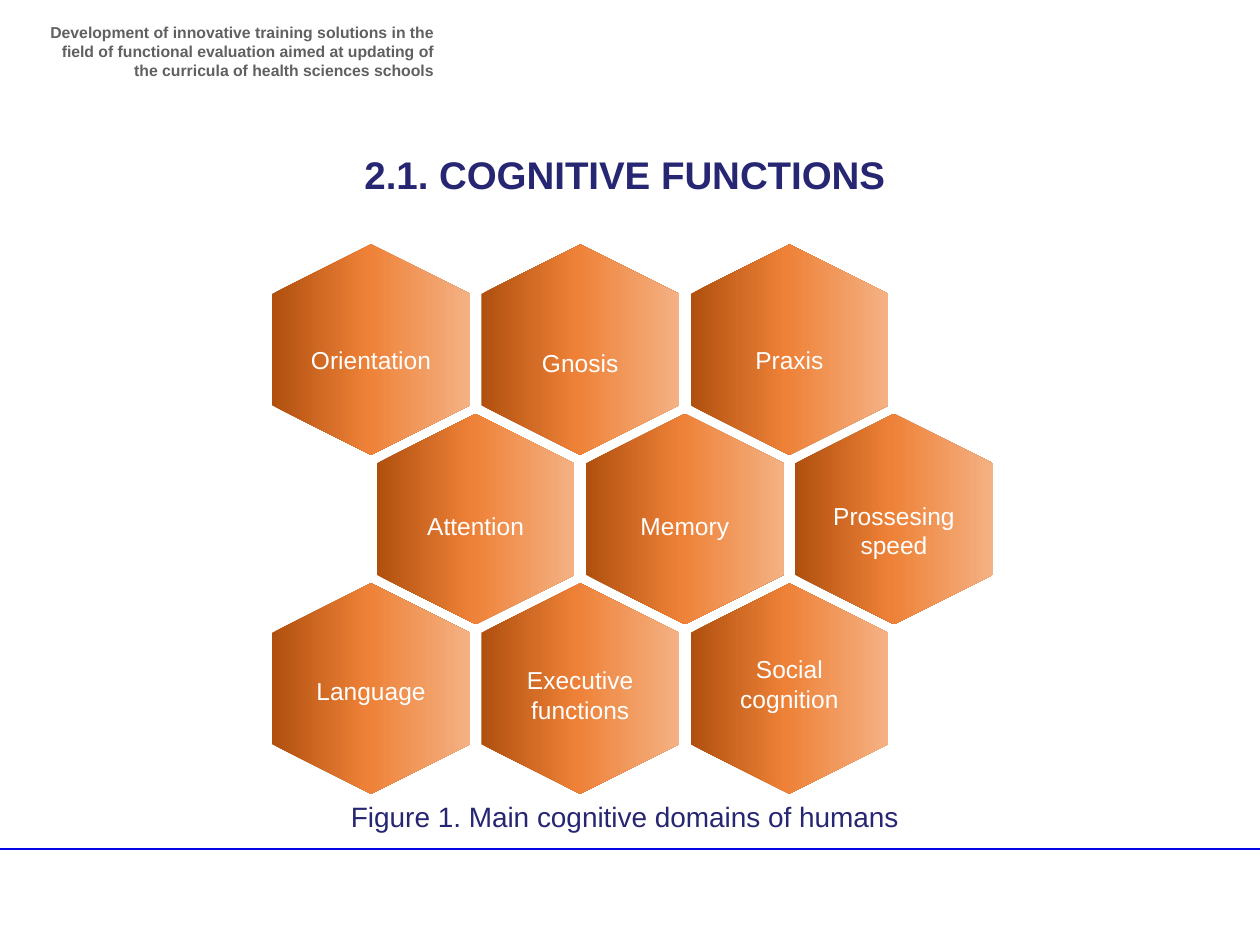
from dataclasses import dataclass

from lxml.etree import SubElement
from pptx import Presentation
from pptx.dml.color import RGBColor
from pptx.enum.shapes import MSO_CONNECTOR, MSO_SHAPE
from pptx.enum.text import MSO_ANCHOR, PP_ALIGN
from pptx.oxml import parse_xml
from pptx.oxml.ns import nsdecls, qn
from pptx.util import Inches, Pt


@dataclass(frozen=True)
class Theme:
    font: str = "Arial"
    navy: str = "262673"
    grey: str = "606060"
    white: str = "FFFFFF"
    rule: str = "0404E6"
    gradient: tuple = ((0, "B0500F"), (48, "EE8137"), (100, "F4B183"))
    title: int = 22
    caption: int = 16
    label: int = 14
    header: int = 9


THEME = Theme()

# Each row: its shift in columns, then (label, drop below the hexagon's centre)
DOMAINS = (
    (0, (("Orientation", 0.1), ("Gnosis", 0.12), ("Praxis", 0.1))),
    (0.5, (("Attention", 0.07), ("Memory", 0.07), ("Prossesing speed", 0.09))),
    (0, (("Language", 0.04), ("Executive functions", 0.05), ("Social cognition", -0.04))),
)


def place(sp, box):
    sp.left, sp.top, sp.width, sp.height = (Inches(v) for v in box)


def write(sp, text, size, color, bold=False, align=PP_ALIGN.CENTER, anchor=MSO_ANCHOR.TOP):
    tf = sp.text_frame
    tf.word_wrap = True
    tf.vertical_anchor = anchor
    p = tf.paragraphs[0]
    p.alignment = align
    r = p.add_run()
    r.text = text
    r.font.name = THEME.font
    r.font.size = Pt(size)
    r.font.bold = bold
    r.font.color.rgb = RGBColor.from_string(color)
    return p


def add_text(s, box, *args, **style):
    sp = s.shapes.add_textbox(*(Inches(v) for v in box))
    return write(sp, *args, **style)


def add_rule(s, x1, x2, y):
    line = s.shapes.add_connector(
        MSO_CONNECTOR.STRAIGHT, Inches(x1), Inches(y), Inches(x2), Inches(y))
    line.line.color.rgb = RGBColor.from_string(THEME.rule)
    line.line.width = Pt(1)
    SubElement(line._element.spPr, qn("a:effectLst"))


def add_hexagon(s, cx, cy, length, breadth):
    """Pointed-top hexagon centred on (cx, cy), shaded from left to right."""
    sp = s.shapes.add_shape(MSO_SHAPE.HEXAGON, 0, 0, 0, 0)
    place(sp, (cx - length / 2, cy - breadth / 2, length, breadth))
    sp.rotation = 90
    sp.shadow.inherit = False
    sp.line.fill.background()
    stops = "".join(f'<a:gs pos="{pos * 1000}"><a:srgbClr val="{color}"/></a:gs>'
                    for pos, color in THEME.gradient)
    fill = parse_xml(f'<a:gradFill {nsdecls("a")} rotWithShape="1"><a:gsLst>{stops}</a:gsLst>'
                     '<a:lin ang="16200000" scaled="0"/></a:gradFill>')
    sp._element.spPr.find(qn("a:prstGeom")).addnext(fill)


def add_label(s, cx, cy, width, text):
    height = 0.57 if " " in text else 0.31
    p = add_text(s, (cx - width / 2, cy - height / 2, width, height), text,
                 THEME.label, THEME.white, anchor=MSO_ANCHOR.MIDDLE)
    if " " not in text:
        p.line_spacing = Pt(THEME.label)


def add_honeycomb(s, box):
    """Rows of interlocking hexagons filling the box, labels on top."""
    left, top, width, height = box
    length, breadth = 1.67, 1.57
    col = (width - breadth) / 2.5
    row = (height - length) / 2
    cells = [(left + breadth / 2 + (c + shift) * col, top + length / 2 + r * row, text, drop)
             for r, (shift, labels) in enumerate(DOMAINS)
             for c, (text, drop) in enumerate(labels)]
    for cx, cy, _, _ in cells:
        add_hexagon(s, cx, cy, length, breadth)
    for cx, cy, text, drop in cells:
        add_label(s, cx, cy + drop, 1.55, text)


def main():
    prs = Presentation()
    prs.slide_width, prs.slide_height = Inches(10), Inches(7.5)
    s = prs.slides.add_slide(prs.slide_layouts[5])

    add_rule(s, -0.05, 10, 6.74)
    add_text(s, (0.28, 0.13, 3.26, 0.47),
             "Development of innovative training solutions in the ﬁeld of functional "
             "evaluation aimed at updating of the curricula of health sciences schools",
             THEME.header, THEME.grey, bold=True, align=PP_ALIGN.RIGHT)
    add_honeycomb(s, (2.16, 1.94, 5.72, 4.36))
    place(s.shapes.title, (0.67, 1.15, 8.58, 0.47))
    write(s.shapes.title, "2.1. COGNITIVE FUNCTIONS", THEME.title, THEME.navy, bold=True)
    add_text(s, (0.55, 6.3, 8.82, 0.37), "Figure 1. Main cognitive domains of humans",
             THEME.caption, THEME.navy)
    prs.save("out.pptx")


if __name__ == "__main__":
    main()
